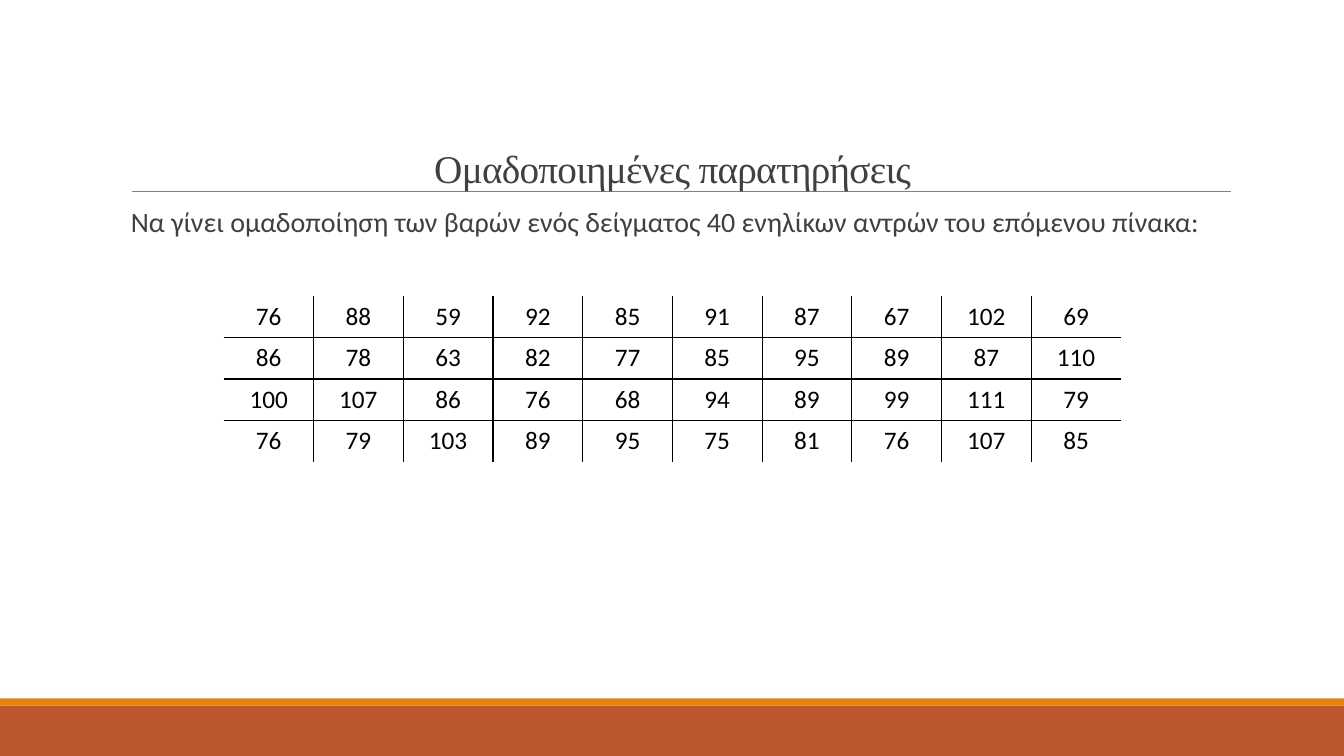
from dataclasses import dataclass

import pptx
import pptx.dml.color
import pptx.enum.shapes
import pptx.enum.text
import pptx.oxml
import pptx.oxml.ns
import pptx.util

Inches = pptx.util.Inches
Pt = pptx.util.Pt
Align = pptx.enum.text.PP_ALIGN
Anchor = pptx.enum.text.MSO_ANCHOR

WEIGHTS = [
    [76, 88, 59, 92, 85, 91, 87, 67, 102, 69],
    [86, 78, 63, 82, 77, 85, 95, 89, 87, 110],
    [100, 107, 86, 76, 68, 94, 89, 99, 111, 79],
    [76, 79, 103, 89, 95, 75, 81, 76, 107, 85],
]


@dataclass(frozen=True)
class Theme:
    band: str = "BD582C"
    stripe: str = "E48312"
    rule: str = "808080"
    text: str = "404040"
    grid: str = "000000"
    title_font: str = "Times New Roman"
    body_font: str = "Calibri"
    title_size: float = 28
    body_size: float = 20
    cell_size: float = 18
    rule_width: float = 0.5
    grid_width: float = 1


def rgb(color):
    return pptx.dml.color.RGBColor.from_string(color)


class SlideBuilder:
    def __init__(self, slide, theme):
        self.slide = slide
        self.theme = theme

    def bar(self, left, top, width, height, color):
        sp = self.slide.shapes.add_shape(
            pptx.enum.shapes.MSO_SHAPE.RECTANGLE,
            Inches(left), Inches(top), Inches(width), Inches(height))
        sp.shadow.inherit = False
        sp.fill.solid()
        sp.fill.fore_color.rgb = rgb(color)
        sp.line.fill.background()

    def rule(self, left, right, y):
        line = self.slide.shapes.add_connector(
            pptx.enum.shapes.MSO_CONNECTOR.STRAIGHT,
            Inches(left), Inches(y), Inches(right), Inches(y))
        line.line.color.rgb = rgb(self.theme.rule)
        line.line.width = Pt(self.theme.rule_width)
        pptx.oxml.ns  # namespace map used by qn below
        props = line._element.spPr
        props.append(props.makeelement(pptx.oxml.ns.qn("a:effectLst"), {}))

    def format_paragraph(self, p, font, size, color, align):
        p.alignment = align
        for r in p.runs:
            r.font.name = font
            r.font.size = Pt(size)
            r.font.color.rgb = rgb(color)

    def text(self, left, top, width, height, text, font, size, align, anchor):
        """Add a wrapped one-paragraph text box and return its paragraph."""
        sp = self.slide.shapes.add_textbox(
            Inches(left), Inches(top), Inches(width), Inches(height))
        tf = sp.text_frame
        tf.word_wrap = True
        tf.vertical_anchor = anchor
        tf.text = text
        p = tf.paragraphs[0]
        self.format_paragraph(p, font, size, self.theme.text, align)
        return p

    def title(self, text):
        p = self.text(1.17, 0.36, 11, 1.59, text, self.theme.title_font,
                      self.theme.title_size, Align.CENTER, Anchor.BOTTOM)
        p.line_spacing = 0.85
        p.runs[0].font._element.set("spc", "-50")

    def body(self, text):
        p = self.text(1.2, 2.02, 11, 4.4, text, self.theme.body_font,
                      self.theme.body_size, Align.LEFT, Anchor.TOP)
        p.line_spacing = 0.9
        p.space_before = Pt(12)
        p.space_after = Pt(2)

    def border(self, cell, side, visible):
        props = cell._tc.get_or_add_tcPr()
        ln = props.makeelement(pptx.oxml.ns.qn(f"a:ln{side}"),
                               {"w": str(Pt(self.theme.grid_width))})
        props.append(ln)
        if visible:
            fill = ln.makeelement(pptx.oxml.ns.qn("a:solidFill"), {})
            fill.append(fill.makeelement(pptx.oxml.ns.qn("a:srgbClr"),
                                         {"val": self.theme.grid}))
        else:
            fill = ln.makeelement(pptx.oxml.ns.qn("a:noFill"), {})
        ln.append(fill)

    def table(self, left, top, col_width, row_height, rows):
        """Add a centred table that has inner grid lines only."""
        n_rows, n_cols = len(rows), len(rows[0])
        table = self.slide.shapes.add_table(
            n_rows, n_cols, Inches(left), Inches(top),
            Inches(col_width * n_cols), Inches(row_height * n_rows)).table
        table.first_row = table.horz_banding = False
        for i, row in enumerate(rows):
            for j, value in enumerate(row):
                cell = table.cell(i, j)
                cell.text = str(value)
                cell.vertical_anchor = Anchor.MIDDLE
                self.format_paragraph(
                    cell.text_frame.paragraphs[0], self.theme.body_font,
                    self.theme.cell_size, self.theme.grid, Align.CENTER)
                inner = {"L": j > 0, "R": j < n_cols - 1,
                         "T": i > 0, "B": i < n_rows - 1}
                for side, visible in inner.items():
                    self.border(cell, side, visible)
                cell.fill.background()


def main():
    prs = pptx.Presentation()
    prs.slide_width = Inches(13.33)
    prs.slide_height = Inches(7.5)
    theme = Theme()
    s = SlideBuilder(prs.slides.add_slide(prs.slide_layouts[6]), theme)
    s.bar(0, 7, 13.33, 0.5, theme.band)
    s.bar(0, 6.93, 13.33, 0.07, theme.stripe)
    s.rule(1.31, 12.21, 1.9)
    s.title("Ομαδοποιημένες παρατηρήσεις")
    s.body("Να γίνει ομαδοποίηση των βαρών ενός δείγματος 40 ενηλίκων "
           "αντρών του επόμενου πίνακα:")
    s.table(2.22, 2.94, 0.89, 0.41, WEIGHTS)
    prs.save("out.pptx")


if __name__ == "__main__":
    main()
